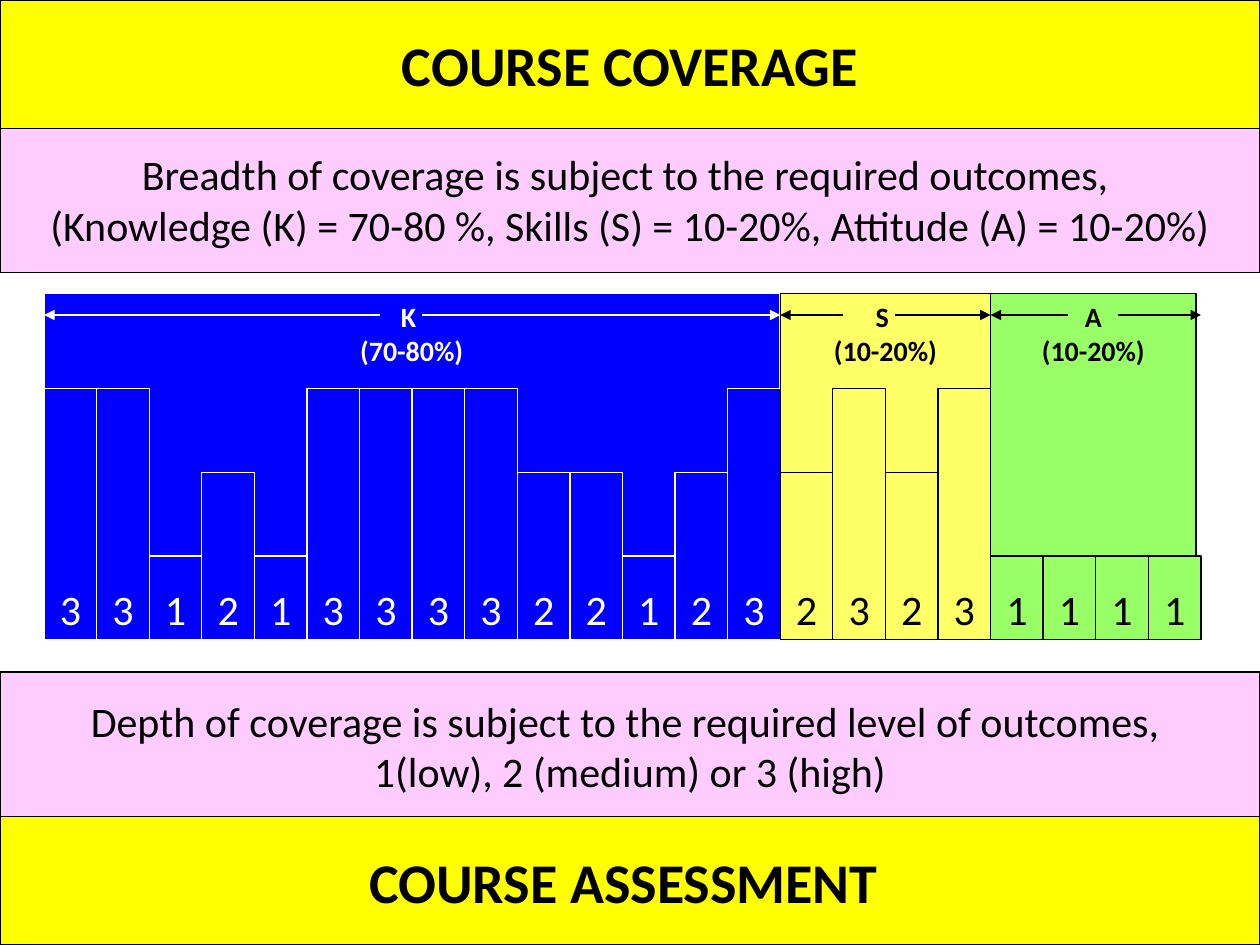
from lxml import etree
from pptx import Presentation
from pptx.dml.color import RGBColor
from pptx.enum import shapes, text
from pptx.oxml.ns import qn
from pptx.util import Cm, Pt

BLACK = RGBColor(0x00, 0x00, 0x00)
WHITE = RGBColor(0xFF, 0xFF, 0xFF)
BLUE = RGBColor(0x00, 0x00, 0xFF)
GOLD = RGBColor(0xFF, 0xFF, 0x66)
GREEN = RGBColor(0x99, 0xFF, 0x66)
PINK = RGBColor(0xFF, 0xCC, 0xFF)
YELLOW = RGBColor(0xFF, 0xFF, 0x00)

WIDE, HIGH = 25.4, 19.05
LEFT, TOP, DEEP = 0.89, 5.92, 6.98
BAR, STEP = 1.06, 1.69  # width of a bar, height of one level

# label, share, fill, ink, panel width, gap in the arrow, levels
GROUPS = [
    ("K ", "(70-80%)", BLUE, WHITE, 14.82, (6.78, 7.62),
     [3, 3, 1, 2, 1, 3, 3, 3, 3, 2, 2, 1, 2, 3]),
    ("S ", "(10-20%)", GOLD, BLACK, 4.24, (1.27, 2.31), [2, 3, 2, 3]),
    ("A", "(10-20%)", GREEN, BLACK, 4.14, (1.55, 2.57), [1, 1, 1, 1]),
]
BREADTH = ("Breadth of coverage is subject to the required outcomes, \n"
           "(Knowledge (K) = 70-80 %, Skills (S) = 10-20%, "
           "Attitude (A) = 10-20%)")
DEPTH = ("Depth of coverage is subject to the required level of outcomes, \n"
         "1(low), 2 (medium) or 3 (high)")


def add_box(slide, box, words, fill, size, ink=BLACK, bold=False,
            anchor=text.MSO_ANCHOR.MIDDLE, wrap=True):
    shape = slide.shapes.add_shape(shapes.MSO_SHAPE.RECTANGLE,
                                   *[Cm(n) for n in box])
    shape.shadow.inherit = False
    shape.fill.solid()
    shape.fill.fore_color.rgb = fill
    shape.line.color.rgb = ink
    shape.line.width = Pt(0.75)
    frame = shape.text_frame
    frame.text = words
    frame.word_wrap = wrap
    frame.vertical_anchor = anchor
    for para in frame.paragraphs:
        para.alignment = text.PP_ALIGN.CENTER
        for run in para.runs:
            run.font.name = "Calibri"
            run.font.size = Pt(size)
            run.font.bold = bold
            run.font.color.rgb = ink


def add_arrow(slide, start, end, y, ink):
    line = slide.shapes.add_connector(shapes.MSO_CONNECTOR.STRAIGHT,
                                      Cm(start), Cm(y), Cm(end), Cm(y))
    line.line.color.rgb = ink
    line.line.width = Pt(0.75)
    etree.SubElement(line.line._get_or_add_ln(), qn("a:tailEnd"),
                     type="triangle")
    etree.SubElement(line._element.spPr, qn("a:effectLst"))


def add_group(slide, left, top, group):
    """Draw a panel with its span arrows and level bars; return its right."""
    label, share, fill, ink, width, gap, levels = group
    right = left + BAR * len(levels)
    add_box(slide, (left, top, width, DEEP), f"{label}\n{share}", fill, 16,
            ink, True, text.MSO_ANCHOR.TOP)
    for start, end in ((gap[0], left), (gap[1], right)):
        add_arrow(slide, left + start, end, top + 0.43, ink)
    for i, level in enumerate(levels):
        tall = STEP * level
        add_box(slide, (left + BAR * i, top + DEEP - tall, BAR, tall),
                str(level), fill, 24, ink,
                anchor=text.MSO_ANCHOR.BOTTOM, wrap=False)
    return right


def add_note(slide, top, words):
    add_box(slide, (0, top, WIDE, 2.96), words, PINK, 24)


def add_title(slide, top, words):
    add_box(slide, (0, top, WIDE, 2.59), words, YELLOW, 32, bold=True,
            wrap=False)


def main():
    deck = Presentation()
    deck.slide_width, deck.slide_height = Cm(WIDE), Cm(HIGH)
    slide = deck.slides.add_slide(deck.slide_layouts[6])
    left = LEFT
    for group in GROUPS:
        left = add_group(slide, left, TOP, group)
    add_note(slide, 2.54, BREADTH)
    add_note(slide, 13.55, DEPTH)
    add_title(slide, 0, "COURSE COVERAGE")
    add_title(slide, HIGH - 2.59, "COURSE ASSESSMENT ")
    deck.save("out.pptx")


if __name__ == "__main__":
    main()
